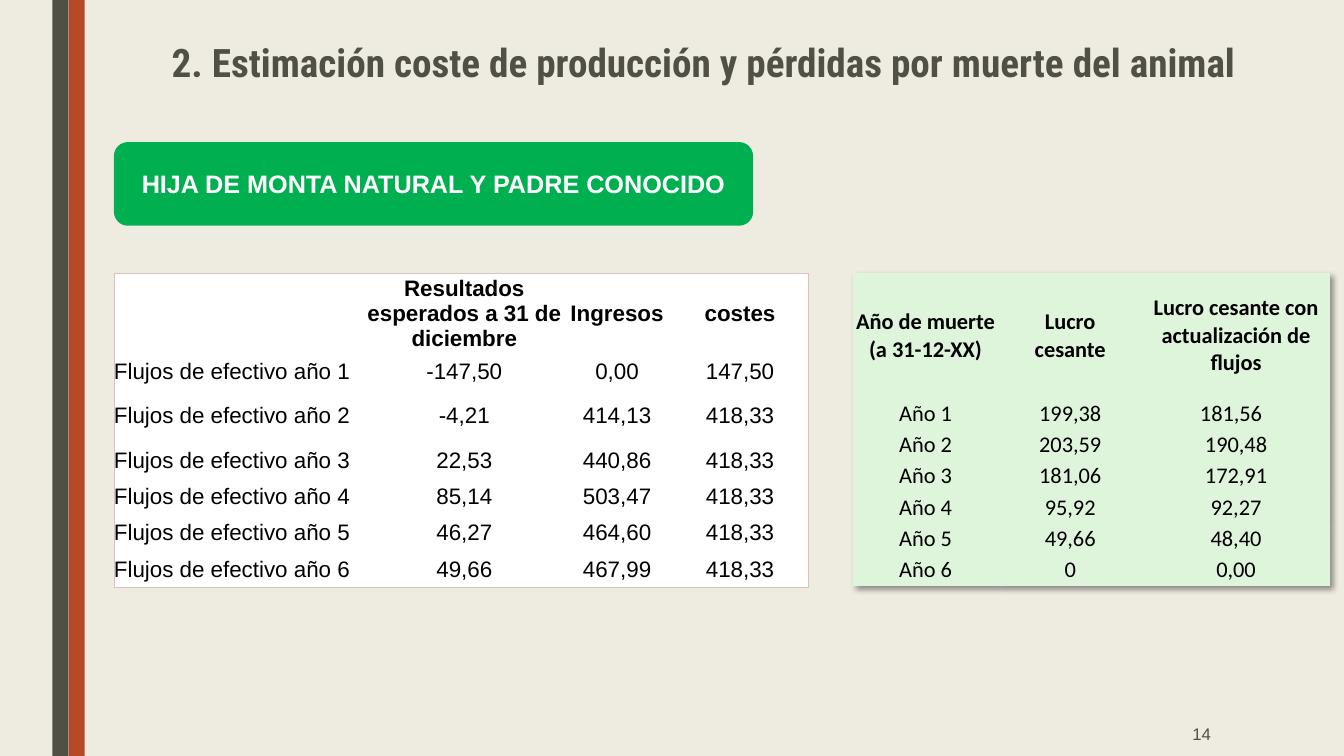
from lxml import etree
from pptx import Presentation
from pptx.dml.color import RGBColor
from pptx.enum.shapes import MSO_SHAPE
from pptx.enum.text import MSO_ANCHOR, PP_ALIGN
from pptx.oxml import parse_xml
from pptx.oxml.ns import nsdecls
from pptx.util import Inches, Pt

# Content
TITLE = "2. Estimación coste de producción y pérdidas por muerte del animal"
BADGE = "HIJA DE MONTA NATURAL Y PADRE CONOCIDO"
PAGE_NUMBER = "14"
CASH_FLOWS = [
    ("", "Resultados esperados a 31 de diciembre", "Ingresos", "costes"),
    ("Flujos de efectivo año 1", "-147,50", "0,00", "147,50"),
    ("Flujos de efectivo año 2", "-4,21", "414,13", "418,33"),
    ("Flujos de efectivo año 3", "22,53", "440,86", "418,33"),
    ("Flujos de efectivo año 4", "85,14", "503,47", "418,33"),
    ("Flujos de efectivo año 5", "46,27", "464,60", "418,33"),
    ("Flujos de efectivo año 6", "49,66", "467,99", "418,33"),
]
LOST_PROFITS = [
    ("Año de muerte (a 31-12-XX)", "Lucro\ncesante", "Lucro cesante con actualización de flujos"),
    ("Año 1", "199,38", "181,56"),
    ("Año 2", "203,59", "190,48"),
    ("Año 3", "181,06", "172,91"),
    ("Año 4", "95,92", "92,27"),
    ("Año 5", "49,66", "48,40"),
    ("Año 6", "0", "0,00"),
]
COLORS = {
    "background": "EEECE1", "rust": "B64926", "dark": "505046", "green": "00B050",
    "pale green": "DFF5DB", "white": "FFFFFF", "black": "000000", "border": "DEC1BE",
}
TABLE_TOP = 2.71


def color(name):
    return RGBColor.from_string(COLORS[name])


def write(frame, text, font_name, size, font_color, bold=False, align=PP_ALIGN.CENTER):
    frame.word_wrap = True
    frame.text = text
    for paragraph in frame.paragraphs:
        paragraph.alignment = align
        font = paragraph.font
        font.name, font.size, font.bold = font_name, Pt(size), bold
        font.color.rgb = color(font_color)


def add_block(slide, kind, box, fill):
    shape = slide.shapes.add_shape(kind, *map(Inches, box))
    shape.shadow.inherit = False
    shape.fill.solid()
    shape.fill.fore_color.rgb = color(fill)
    shape.line.fill.background()
    return shape


def add_text(slide, box, anchor, *text_style, **options):
    frame = slide.shapes.add_textbox(*map(Inches, box)).text_frame
    frame.vertical_anchor = anchor
    write(frame, *text_style, **options)
    return frame


def add_grid(slide, left, rows, widths, heights, font_name, fill, first_align):
    frame = slide.shapes.add_table(
        len(rows), len(widths), Inches(left), Inches(TABLE_TOP),
        Inches(sum(widths)), Inches(sum(heights)))
    table = frame.table
    table.first_row = table.horz_banding = False
    for column, width in zip(table.columns, widths):
        column.width = Inches(width)
    for row, height in zip(table.rows, heights):
        row.height = Inches(height)
    for r, values in enumerate(rows):
        for c, value in enumerate(values):
            cell = table.cell(r, c)
            cell.margin_left = cell.margin_right = cell.margin_top = cell.margin_bottom = 0
            cell.vertical_anchor = MSO_ANCHOR.MIDDLE
            align = first_align if c == 0 else PP_ALIGN.CENTER
            write(cell.text_frame, value, font_name, 16, "black", r == 0, align)
            cell.fill.solid()
            cell.fill.fore_color.rgb = color(fill)
    return table


def add_outline(table):
    last_row, last_column = len(table.rows) - 1, len(table.columns) - 1
    for r in range(last_row + 1):
        for c in range(last_column + 1):
            properties = table.cell(r, c)._tc.get_or_add_tcPr()
            edges = {"lnL": c == 0, "lnR": c == last_column, "lnT": r == 0, "lnB": r == last_row}
            drawn = [tag for tag, outer in edges.items() if outer]
            for position, tag in enumerate(drawn):
                properties.insert(position, parse_xml(
                    f'<a:{tag} {nsdecls("a")} w="6350"><a:solidFill>'
                    f'<a:srgbClr val="{COLORS["border"]}"/></a:solidFill></a:{tag}>'))


def add_table_shadow(table):
    properties = table._tbl.tblPr
    properties.insert(0, parse_xml(
        f'<a:effectLst {nsdecls("a")}><a:outerShdw blurRad="50800" dist="38100" dir="2700000" '
        'algn="tl" rotWithShape="0"><a:srgbClr val="000000"><a:alpha val="40000"/>'
        '</a:srgbClr></a:outerShdw></a:effectLst>'))


def drop_table_style(table):
    for style in table._tbl.tblPr.findall("{*}tableStyleId"):
        style.text = "{2D5ABB26-0587-4C30-8999-92F81FD0307C}"


def main():
    presentation = Presentation()
    presentation.slide_width, presentation.slide_height = Inches(13.33), Inches(7.5)
    slide = presentation.slides.add_slide(presentation.slide_layouts[6])
    slide.background.fill.solid()
    slide.background.fill.fore_color.rgb = color("background")

    # Side stripes
    for left, fill in ((0.68, "rust"), (0.52, "dark")):
        add_block(slide, MSO_SHAPE.RECTANGLE, (left, 0, 0.16, 7.5), fill)

    # Title and badge
    title = add_text(slide, (0.86, 0.39, 12.23, 0.62), MSO_ANCHOR.TOP,
                     TITLE, "Roboto Condensed", 28, "dark", bold=True)
    title.paragraphs[0].line_spacing = 0.89
    badge = add_block(slide, MSO_SHAPE.ROUNDED_RECTANGLE, (1.13, 1.41, 6.34, 0.83), "green")
    badge.text_frame.vertical_anchor = MSO_ANCHOR.MIDDLE
    write(badge.text_frame, BADGE, "Arial", 18, "white", bold=True)

    # Tables
    cash_flows = add_grid(slide, 1.13, CASH_FLOWS, [2.5, 1.95, 1.08, 1.36],
                          [0.78, 0.36, 0.52] + [0.36] * 4, "Arial", "white", PP_ALIGN.LEFT)
    lost_profits = add_grid(slide, 8.46, LOST_PROFITS, [1.44, 1.43, 1.86],
                            [1.24] + [0.31] * 6, "Calibri", "pale green", PP_ALIGN.CENTER)
    for table in (cash_flows, lost_profits):
        drop_table_style(table)
    add_outline(cash_flows)
    add_table_shadow(lost_profits)
    lost_profits.cell(1, 2).margin_right = Inches(0.1)

    # Page number
    add_text(slide, (10.36, 7.06, 1.75, 0.44), MSO_ANCHOR.MIDDLE,
             PAGE_NUMBER, "Arial", 12, "dark", align=PP_ALIGN.RIGHT)

    presentation.save("out.pptx")


if __name__ == "__main__":
    main()
